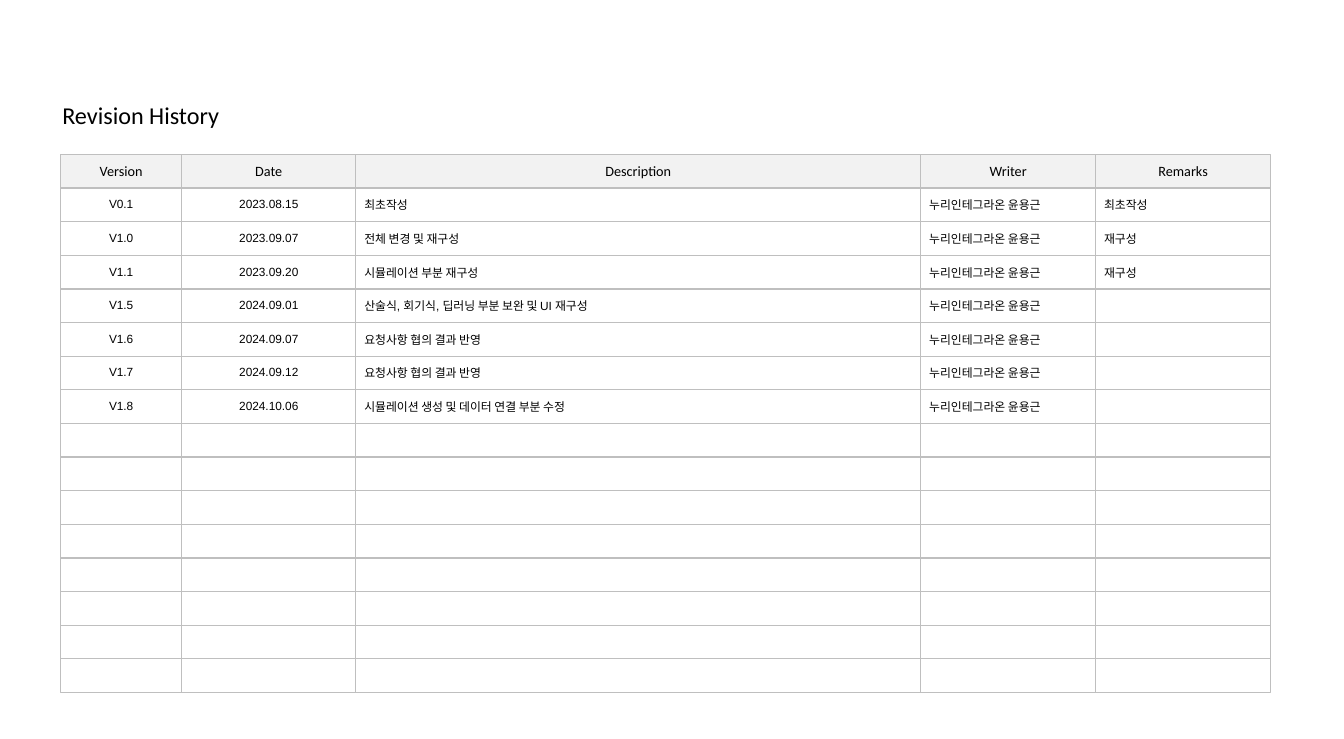
"""Build the revision history slide: a title, a ruled grid and a table of revisions."""
from dataclasses import dataclass
from itertools import accumulate

from pptx import Presentation
from pptx.dml.color import RGBColor
from pptx.enum.shapes import MSO_SHAPE
from pptx.enum.text import MSO_ANCHOR, MSO_AUTO_SIZE, PP_ALIGN
from pptx.oxml.ns import qn
from pptx.util import Emu, Pt

TITLE = "Revision History"
WRITER = "누리인테그라온 윤용근"
COLUMNS = [
    ("Version", 142, PP_ALIGN.CENTER),
    ("Date", 204, PP_ALIGN.CENTER),
    ("Description", 662, PP_ALIGN.LEFT),
    ("Writer", 205, PP_ALIGN.LEFT),
    ("Remarks", 205, PP_ALIGN.LEFT),
]
REVISIONS = [
    ("V0.1", "2023.08.15", "최초작성", WRITER, "최초작성"),
    ("V1.0", "2023.09.07", "전체 변경 및 재구성", WRITER, "재구성"),
    ("V1.1", "2023.09.20", "시뮬레이션 부분 재구성", WRITER, "재구성"),
    ("V1.5", "2024.09.01", "산술식, 회기식, 딥러닝 부분 보완 및 UI 재구성", WRITER, ""),
    ("V1.6", "2024.09.07", "요청사항 협의 결과 반영", WRITER, ""),
    ("V1.7", "2024.09.12", "요청사항 협의 결과 반영", WRITER, ""),
    ("V1.8", "2024.10.06", "시뮬레이션 생성 및 데이터 연결 부분 수정", WRITER, ""),
]
ROW_COUNT = 15

PX_PER_INCH = 100
SLIDE_SIZE = (1575, 866)
TITLE_BOX = (63, 112, 206, 44)
GRID_LEFT, GRID_TOP = 71, 181
TABLE_HEIGHT = 591
ROW_HEIGHT = TABLE_HEIGHT / ROW_COUNT
PLAIN_TABLE_STYLE = "{2D5ABB26-0587-4C30-8999-92F81FD0307C}"


@dataclass(frozen=True)
class Theme:
    """Colours, fonts and type sizes of the slide."""
    text: RGBColor = RGBColor(0, 0, 0)
    header: RGBColor = RGBColor(0xF2, 0xF2, 0xF2)
    border: RGBColor = RGBColor(0xBF, 0xBF, 0xBF)
    border_width: Pt = Pt(1)
    heading_font: str = "Calibri"
    body_font: str = "Arial"
    title_size: Pt = Pt(20.4)
    header_size: Pt = Pt(12)
    body_size: Pt = Pt(10)


THEME = Theme()


def px(length):
    """Turn px into EMU."""
    return Emu(round(length * 914400 / PX_PER_INCH))


def write(frame, wording, font_name, size, align):
    """Set one line of text and its format."""
    frame.text = wording
    line = frame.paragraphs[0]
    line.alignment = align
    for run in line.runs:
        run.font.name = font_name
        run.font.size = size
        run.font.color.rgb = THEME.text


def add_title(slide):
    """Place the slide title."""
    title = slide.shapes.title
    title.left, title.top, title.width, title.height = map(px, TITLE_BOX)
    write(title.text_frame, TITLE, THEME.heading_font, THEME.title_size, PP_ALIGN.LEFT)
    title.text_frame.word_wrap = False
    title.text_frame.auto_size = MSO_AUTO_SIZE.NONE
    title.text_frame.vertical_anchor = MSO_ANCHOR.MIDDLE


def add_box(slide, left, top, width):
    """Draw one outlined box of the grid."""
    box = slide.shapes.add_shape(
        MSO_SHAPE.RECTANGLE, px(left), px(top), px(width), px(ROW_HEIGHT))
    box.shadow.inherit = False
    box.fill.background()
    box.line.color.rgb = THEME.border
    box.line.width = THEME.border_width
    return box


def add_grid(slide):
    """Draw the headed grid that the table of revisions lies on."""
    lefts = list(accumulate((width for _, width, _ in COLUMNS), initial=GRID_LEFT))
    for row in range(ROW_COUNT + 1):
        for left, (label, width, _) in zip(lefts, COLUMNS):
            box = add_box(slide, left, GRID_TOP + row * ROW_HEIGHT, width)
            if row == 0:
                box.fill.solid()
                box.fill.fore_color.rgb = THEME.header
                box.text_frame.vertical_anchor = MSO_ANCHOR.MIDDLE
                write(box.text_frame, label, THEME.heading_font, THEME.header_size,
                      PP_ALIGN.CENTER)


def add_revisions(slide):
    """Add the table of revisions, with empty rows for later entries."""
    table_width = sum(width for _, width, _ in COLUMNS)
    table = slide.shapes.add_table(
        ROW_COUNT, len(COLUMNS), px(GRID_LEFT), px(GRID_TOP + ROW_HEIGHT),
        px(table_width), px(TABLE_HEIGHT)).table
    table.first_row = table.horz_banding = False
    table._tbl.tblPr.find(qn("a:tableStyleId")).text = PLAIN_TABLE_STYLE
    for column, (_, width, _) in zip(table.columns, COLUMNS):
        column.width = px(width)
    blank_rows = [("",) * len(COLUMNS)] * (ROW_COUNT - len(REVISIONS))
    for row, revision in zip(table.rows, REVISIONS + blank_rows):
        row.height = px(ROW_HEIGHT)
        for cell, entry, (_, _, align) in zip(row.cells, revision, COLUMNS):
            cell.margin_top = cell.margin_bottom = 0
            cell.vertical_anchor = MSO_ANCHOR.MIDDLE
            cell.fill.background()
            write(cell.text_frame, entry, THEME.body_font, THEME.body_size, align)


def main():
    """Build and save the slide."""
    presentation = Presentation()
    presentation.slide_width, presentation.slide_height = map(px, SLIDE_SIZE)
    slide = presentation.slides.add_slide(presentation.slide_layouts[5])
    add_title(slide)
    add_grid(slide)
    add_revisions(slide)
    presentation.save("out.pptx")


if __name__ == "__main__":
    main()
